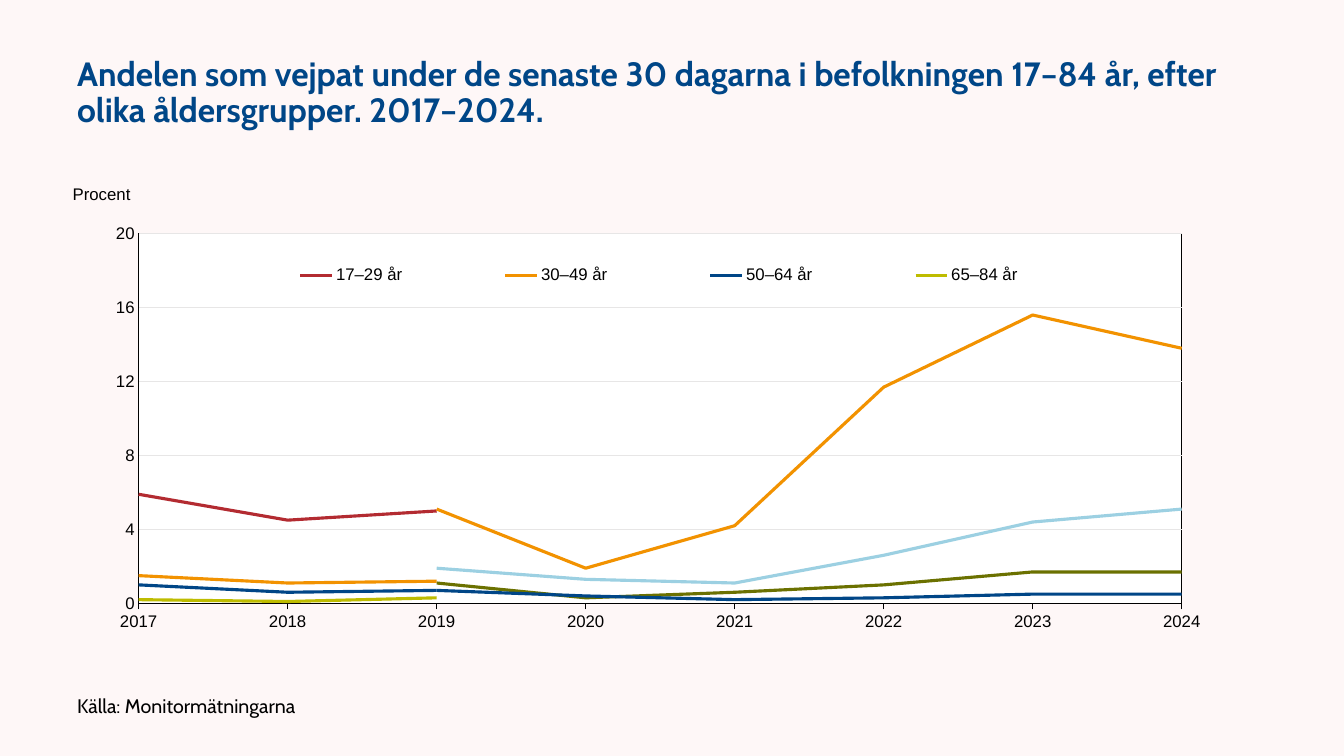
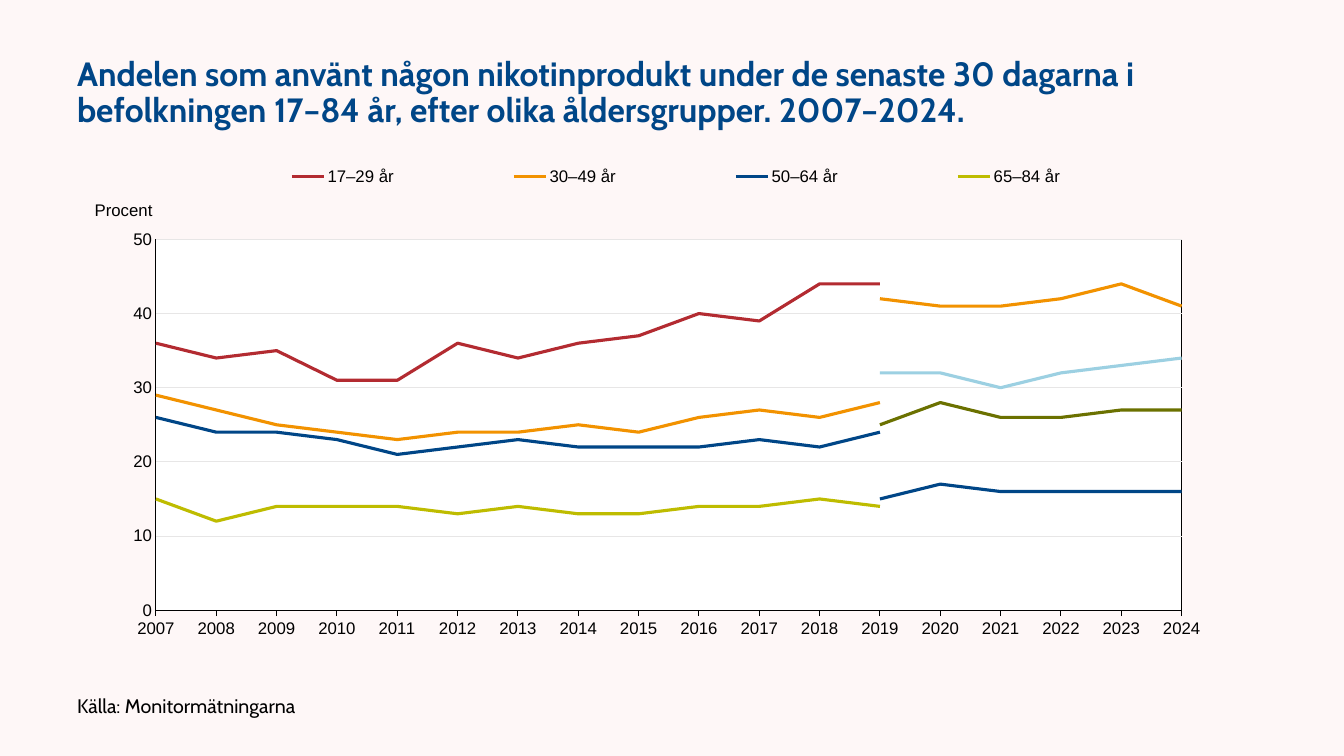
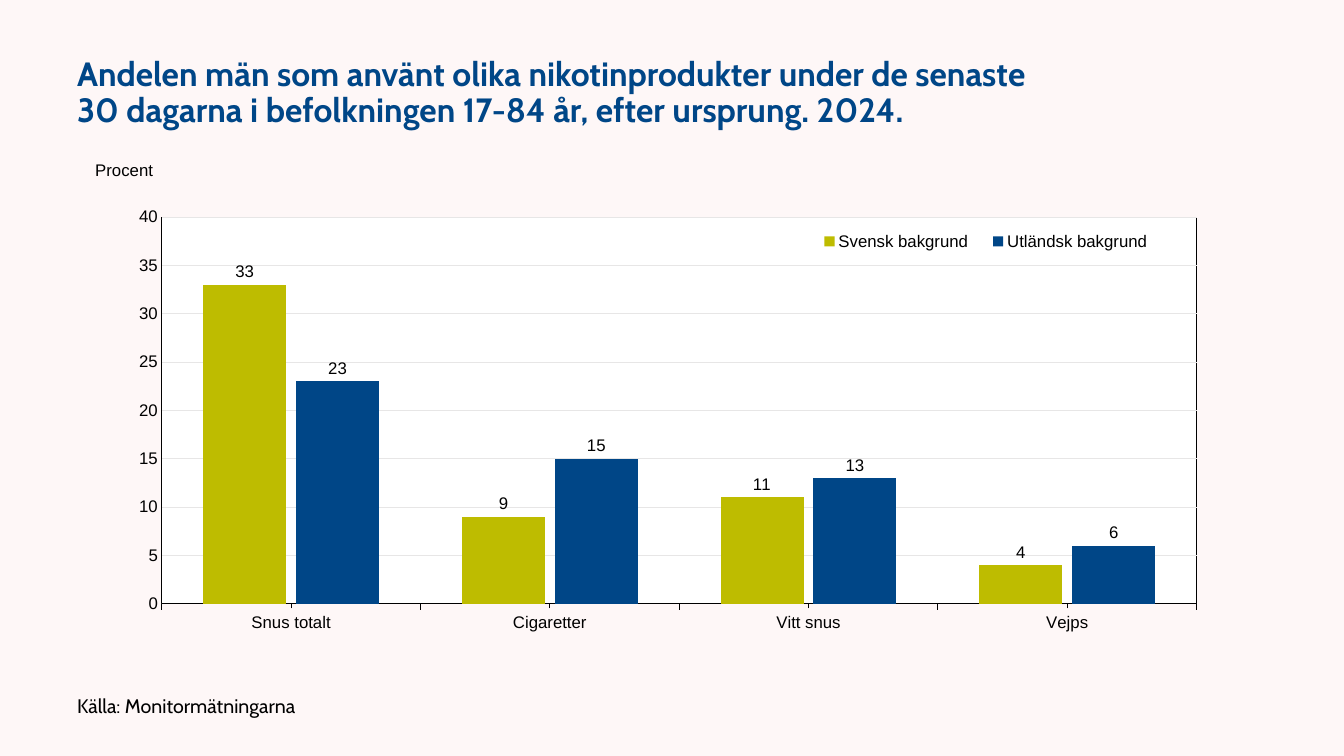
from lxml import etree
from pptx import Presentation
from pptx.chart.data import CategoryChartData
from pptx.dml.color import RGBColor
from pptx.enum import chart as kinds, text as texts
from pptx.oxml.ns import qn
from pptx.util import Pt

BLUE, BLACK, WHITE = "004687", "000000", "FFFFFF"
RED, ORANGE, LIGHT, OLIVE, LIME = "B32B31", "F29200", "9CD0E2", "6B7100", "BEBC00"
GRID, PAPER = "E7E6E6", "FEF7F7"
TITLE = {"size": Pt(24), "name": "Cabin", "bold": True}
SOURCE = {"size": Pt(14), "name": "Cabin"}
CHART = {"size": Pt(12), "name": "Arial", "bold": False}
TITLE_BOX = (48, 21.6, 864, 90)
SOURCE_BOX = (48, 491.8, 432, 26.6)
LINE_COLORS = (RED, ORANGE, ORANGE, LIGHT, BLUE, OLIVE, LIME, BLUE)


def color(value):
    """Turn a hex string into a colour."""
    return RGBColor.from_string(value)


def apply_font(font, values, ink):
    """Set font attributes from a dict, and the colour."""
    for key, value in values.items():
        setattr(font, key, value)
    font.color.rgb = color(ink)


def apply_line(line, ink, width):
    """Set the colour and width of a line."""
    line.color.rgb = color(ink)
    line.width = Pt(width)


def add_text(page, bounds, wording, values, ink):
    """Add a wrapped, vertically centred text box."""
    box = page.shapes.add_textbox(*map(Pt, bounds))
    frame = box.text_frame
    frame.word_wrap = True
    frame.vertical_anchor = texts.MSO_ANCHOR.MIDDLE
    para = frame.paragraphs[0]
    para.text = wording
    para.line_spacing = 0.9
    for span in para.runs:
        apply_font(span.font, values, ink)


def add_page(deck, title):
    """Add a slide with its title and source line."""
    page = deck.slides.add_slide(deck.slide_layouts[6])
    add_text(page, TITLE_BOX, title, TITLE, BLUE)
    add_text(page, SOURCE_BOX, "Källa: Monitormätningarna", SOURCE, BLACK)
    return page


def element(parent, tag, **attributes):
    """Append a child element."""
    return etree.SubElement(parent, qn(tag), attributes)


def make_layout(fractions, inner=False):
    """Build a manual layout from x, y and optional w, h fractions."""
    layout = etree.Element(qn("c:layout"))
    manual = element(layout, "c:manualLayout")
    if inner:
        element(manual, "c:layoutTarget", val="inner")
    for key in ("xMode", "yMode"):
        element(manual, f"c:{key}", val="edge")
    for key, value in zip("xywh", fractions):
        element(manual, f"c:{key}", val=str(value))
    return layout


def drop_children(parent, tag):
    """Remove the direct children that carry a tag."""
    for child in parent.findall(qn(tag)):
        parent.remove(child)


def style_plot_area(chart, fractions):
    """Place the plot area, fill it white and outline it black."""
    area = chart.element.find(".//" + qn("c:plotArea"))
    drop_children(area, "c:layout")
    area.insert(0, make_layout(fractions, inner=True))
    look = element(area, "c:spPr")
    element(element(look, "a:solidFill"), "a:srgbClr", val=WHITE)
    outline = element(look, "a:ln", w=str(Pt(0.75)))
    element(element(outline, "a:solidFill"), "a:srgbClr", val=BLACK)


def style_legend(chart, fractions, position, hidden):
    """Place the legend and hide the listed entries."""
    chart.has_legend = True
    legend = chart.legend
    legend.position = position
    legend.include_in_layout = True
    apply_font(legend.font, CHART, BLACK)
    root = legend._element
    drop_children(root, "c:layout")
    anchor = root.find(qn("c:legendPos"))
    anchor.addnext(make_layout(fractions))
    for index in reversed(hidden):
        entry = etree.Element(qn("c:legendEntry"))
        element(entry, "c:idx", val=str(index))
        element(entry, "c:delete", val="1")
        anchor.addnext(entry)


def style_axis_title(axis, fractions):
    """Write the unit horizontally above the value axis."""
    axis.has_title = True
    title = axis.axis_title
    frame = title.text_frame
    frame.text = "Procent"
    apply_font(frame.paragraphs[0].runs[0].font, CHART, BLACK)
    root = title._element
    body = root.find(".//" + qn("a:bodyPr"))
    body.set("rot", "0")
    body.set("vert", "horz")
    drop_children(root, "c:layout")
    root.find(qn("c:tx")).addnext(make_layout(fractions))


def style_axes(chart, top, step, crossing, minor, unit_place):
    """Style both axes and set the value scale."""
    marks = kinds.XL_TICK_MARK
    names, values = chart.category_axis, chart.value_axis
    names.major_tick_mark, names.minor_tick_mark = marks.OUTSIDE, minor
    values.major_tick_mark = values.minor_tick_mark = marks.NONE
    names.has_major_gridlines = False
    apply_line(names.format.line, BLACK, 0.75)
    values.format.line.fill.background()
    values.has_major_gridlines = True
    apply_line(values.major_gridlines.format.line, GRID, 0.75)
    for axis in (names, values):
        apply_font(axis.tick_labels.font, CHART, BLACK)
    values.tick_labels.number_format = "0"
    values.tick_labels.number_format_is_linked = False
    values.minimum_scale, values.maximum_scale = 0, top
    root = values._element
    drop_children(root, "c:crossBetween")
    cross = etree.Element(qn("c:crossBetween"), val=crossing)
    root.find(qn("c:crosses")).addnext(cross)
    values.major_unit = step
    style_axis_title(values, unit_place)


def add_chart(page, kind, bounds, names, rows, plot_place):
    """Add a chart with its data, font and plot area."""
    data = CategoryChartData(number_format="General")
    data.categories = names
    for name, values in rows:
        data.add_series(name, values)
    chart = page.shapes.add_chart(kind, *map(Pt, bounds), data).chart
    chart.has_title = False
    apply_font(chart.font, CHART, BLACK)
    chart.plots[0].vary_by_categories = False
    style_plot_area(chart, plot_place)
    return chart


def add_age_chart(page, bounds, first_year, ages, top, step, places, position):
    """Add a line chart where each age group has an early and a late series."""
    years = [str(year) for year in range(first_year, 2025)]
    rows = []
    for name, early, late in ages:
        rows.append((name, early + [None] * (len(years) - len(early))))
        late_name = f"Series {len(rows) + 1}"
        rows.append((late_name, [None] * (len(years) - len(late)) + late))
    plot_place, legend_place, unit_place = places
    chart = add_chart(page, kinds.XL_CHART_TYPE.LINE, bounds, years, rows, plot_place)
    style_axes(chart, top, step, "midCat", kinds.XL_TICK_MARK.NONE, unit_place)
    style_legend(chart, legend_place, position, range(1, len(rows), 2))
    for series, ink in zip(chart.plots[0].series, LINE_COLORS):
        series.smooth = False
        series.marker.style = kinds.XL_MARKER_STYLE.NONE
        apply_line(series.format.line, ink, 2.25)


def add_origin_chart(page):
    """Add the column chart that compares two origins."""
    products = ["Snus totalt", "Cigaretter", "Vitt snus", "Vejps"]
    rows = [("Svensk bakgrund", [33, 9, 11, 4]), ("Utländsk bakgrund", [23, 15, 13, 6])]
    chart = add_chart(page, kinds.XL_CHART_TYPE.COLUMN_CLUSTERED, (54.7, 107.3, 857.5, 382.3),
                      products, rows, (0.071, 0.125, 0.862, 0.723))
    style_axes(chart, 40, 5, "between", kinds.XL_TICK_MARK.OUTSIDE, (0.013, 0.013))
    style_legend(chart, (0.607, 0.133, 0.301, 0.075), kinds.XL_LEGEND_POSITION.BOTTOM, ())
    plot = chart.plots[0]
    plot.gap_width, plot.overlap = 100, -12
    for series, ink in zip(plot.series, (LIME, BLUE)):
        series.format.fill.solid()
        series.format.fill.fore_color.rgb = color(ink)
        labels = series.data_labels
        labels.show_value = True
        labels.position = kinds.XL_LABEL_POSITION.OUTSIDE_END
        apply_font(labels.font, CHART, BLACK)


def main():
    """Build the three slides and save them."""
    deck = Presentation()
    deck.slide_width, deck.slide_height = Pt(960), Pt(540)
    backdrop = deck.slide_master.background.fill
    backdrop.solid()
    backdrop.fore_color.rgb = color(PAPER)

    page = add_page(deck, "Andelen som vejpat under de senaste 30 dagarna i befolkningen "
                          "17–84 år, efter olika åldersgrupper. 2017–2024.")
    vaping = [
        ("17–29 år", [5.9, 4.5, 5], [5.1, 1.9, 4.2, 11.7, 15.6, 13.8]),
        ("30–49 år", [1.5, 1.1, 1.2], [1.9, 1.3, 1.1, 2.6, 4.4, 5.1]),
        ("50–64 år", [1, 0.6, 0.7], [1.1, 0.3, 0.6, 1, 1.7, 1.7]),
        ("65–84 år", [0.2, 0.1, 0.3], [0.7, 0.4, 0.2, 0.3, 0.5, 0.5]),
    ]
    places = ((0.059, 0.127, 0.861, 0.741), (0.112, 0.17, 0.753, 0.08), (0.002, 0.02))
    add_age_chart(page, (48, 121.7, 865.4, 356.4), 2017, vaping, 20, 4, places,
                  kinds.XL_LEGEND_POSITION.BOTTOM)

    page = add_page(deck, "Andelen som använt någon nikotinprodukt under de senaste 30 dagarna i "
                          "befolkningen 17–84 år, efter olika åldersgrupper. 2007–2024.")
    nicotine = [
        ("17–29 år", [36, 34, 35, 31, 31, 36, 34, 36, 37, 40, 39, 44, 44],
         [42, 41, 41, 42, 44, 41]),
        ("30–49 år", [29, 27, 25, 24, 23, 24, 24, 25, 24, 26, 27, 26, 28],
         [32, 32, 30, 32, 33, 34]),
        ("50–64 år", [26, 24, 24, 23, 21, 22, 23, 22, 22, 22, 23, 22, 24],
         [25, 28, 26, 26, 27, 27]),
        ("65–84 år", [15, 12, 14, 14, 14, 13, 14, 13, 13, 14, 14, 15, 14],
         [15, 17, 16, 16, 16, 16]),
    ]
    places = ((0.059, 0.159, 0.861, 0.709), (0.077, 0, 0.837, 0.077), (0.005, 0.077))
    add_age_chart(page, (61.2, 111.6, 851, 373.7), 2007, nicotine, 50, 10, places,
                  kinds.XL_LEGEND_POSITION.TOP)

    page = add_page(deck, "Andelen män som använt olika nikotinprodukter under de senaste\v"
                          "30 dagarna i befolkningen 17-84 år, efter ursprung. 2024.")
    add_origin_chart(page)
    deck.save("out.pptx")


if __name__ == "__main__":
    main()
